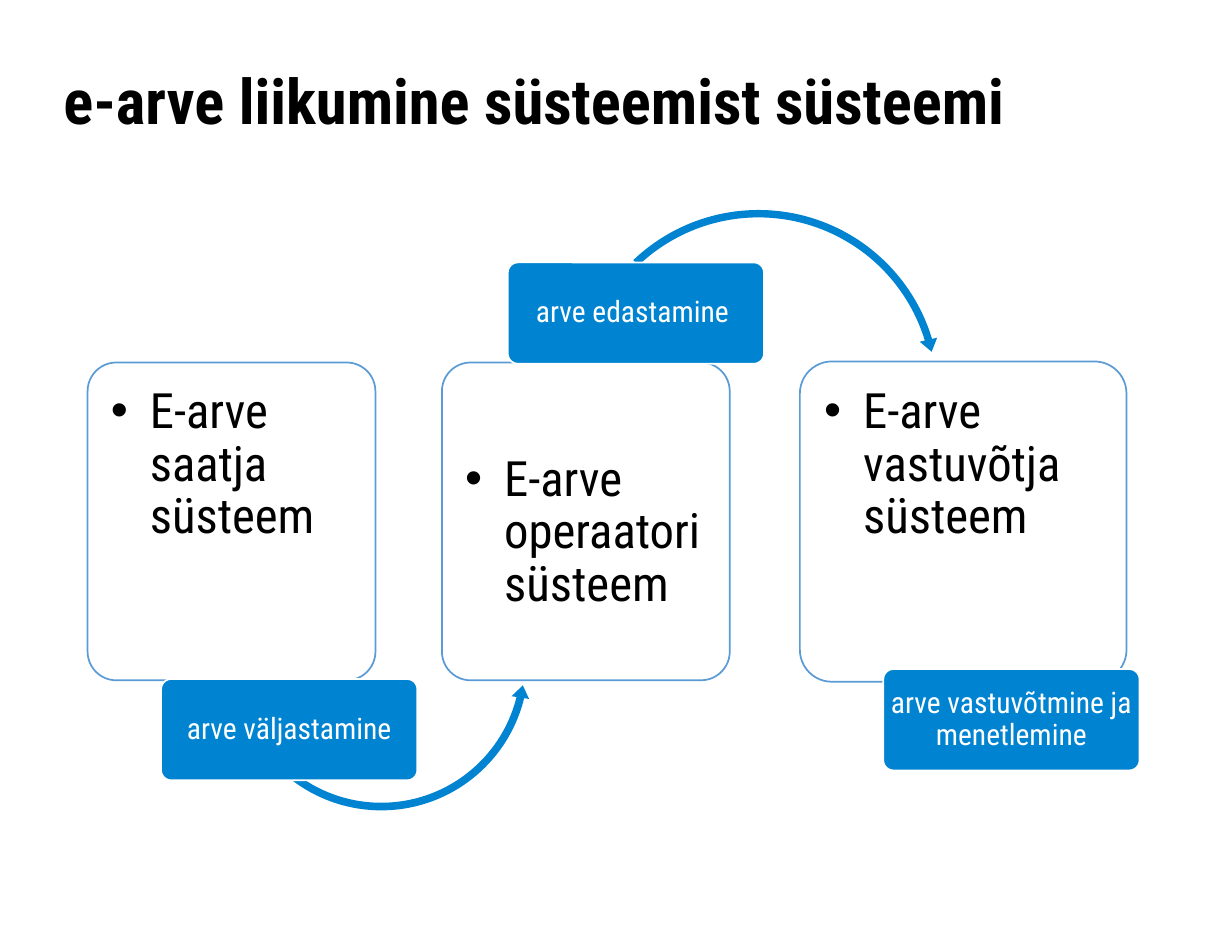
from dataclasses import dataclass

from lxml import etree
from pptx import Presentation
from pptx.dml.color import RGBColor
from pptx.enum.shapes import MSO_SHAPE
from pptx.enum.text import MSO_ANCHOR, PP_ALIGN
from pptx.oxml.ns import qn
from pptx.util import Pt

ROUND = MSO_SHAPE.ROUNDED_RECTANGLE
OVER = MSO_SHAPE.CIRCULAR_ARROW
UNDER = MSO_SHAPE.LEFT_CIRCULAR_ARROW
TOP, MIDDLE = MSO_ANCHOR.TOP, MSO_ANCHOR.MIDDLE
LEFT, CENTER = PP_ALIGN.LEFT, PP_ALIGN.CENTER


@dataclass(frozen=True)
class Theme:
    font: str = "Roboto Condensed"
    dot: str = "Arial"
    ink: RGBColor = RGBColor(0, 0, 0)
    white: RGBColor = RGBColor(255, 255, 255)
    blue: RGBColor = RGBColor(0x00, 0x84, 0xD1)
    edge: RGBColor = RGBColor(0x5B, 0x9B, 0xD5)
    title: int = 36
    body: int = 28
    label: int = 17


THEME = Theme()

# Per step: card box, top inset of its text, text, label position, label text
STEPS = [
    ((50.4, 208.6, 165.6, 182.9), 9, "E-arve saatja süsteem",
     (92.7, 390.7), "arve väljastamine"),
    ((254.2, 208.6, 165.6, 182.9), 48, "E-arve operaatori süsteem",
     (292.1, 151), "arve edastamine "),
    ((460.1, 208, 187.9, 184.3), 9, "E-arve vastuvõtja süsteem",
     (508.1, 385), "arve vastuvõtmine ja menetlemine"),
]
LABEL = (147.4, 58.3)

# Per arrow: kind, left, top, size, band, head span, end and start angles, head
ARROWS = [
    (UNDER, 131.8, 294.2, 175, 0.025, 5, 13.84, 129.65, 0.029),
    (OVER, 329, 117.8, 214.6, 0.02, 4.04, 343.13, 226.35, 0.024),
]


def write(shape, text, size, color, align, anchor, insets, lines, bold=False):
    frame = shape.text_frame
    sides = ("margin_left", "margin_top", "margin_right", "margin_bottom")
    look = dict(zip(sides, map(Pt, insets)))
    look.update(word_wrap=True, vertical_anchor=anchor)
    for name, value in look.items():
        setattr(frame, name, value)
    para = frame.paragraphs[0]
    para.alignment, para.line_spacing = align, lines
    run = para.add_run()
    run.text = text
    font = {"name": THEME.font, "size": Pt(size), "bold": bold}
    for name, value in font.items():
        setattr(run.font, name, value)
    run.font.color.rgb = color
    return para


def draw(slide, kind, box, fill, line=None):
    shape = slide.shapes.add_shape(kind, *map(Pt, box))
    shape.shadow.inherit = False
    shape.fill.solid()
    shape.fill.fore_color.rgb = fill
    if line is None:
        shape.line.fill.background()
    else:
        shape.line.color.rgb = line
        shape.line.width = Pt(1)
    return shape


def bullet(para, indent):
    props = para._p.get_or_add_pPr()
    props.set("marL", str(Pt(indent)))
    props.set("indent", str(-Pt(indent)))
    etree.SubElement(props, qn("a:buFont")).set("typeface", THEME.dot)
    etree.SubElement(props, qn("a:buChar")).set("char", "•")


def card(slide, box, top, text):
    shape = draw(slide, ROUND, box, THEME.white, THEME.edge)
    shape.adjustments[0] = 0.1
    tint = shape.fill._xPr.find(".//" + qn("a:srgbClr"))
    etree.SubElement(tint, qn("a:alpha")).set("val", "90000")
    para = write(shape, text, THEME.body, THEME.ink, LEFT, TOP,
                 (8.5, top, 8.5, 9), 0.9)
    bullet(para, 22.5)


def label(slide, box, text):
    shape = draw(slide, ROUND, box, THEME.blue, THEME.white)
    shape.adjustments[0] = 0.1
    write(shape, text, THEME.label, THEME.white, CENTER, MIDDLE,
          (2.5, 1.5, 2.5, 1.5), 0.9)


def arrow(slide, kind, left, top, size, band, span, end, start, head):
    """Draw an arc arrow; angles are degrees clockwise from the right."""
    shape = draw(slide, kind, (left, top, size, size), THEME.blue)
    unit = 0.6  # one degree in adjustment units
    values = (band, span * unit, end * unit, start * unit, head)
    for spot, value in enumerate(values):
        shape.adjustments[spot] = value


def heading(slide, box, text):
    shape = slide.shapes.title
    for name, value in zip(("left", "top", "width", "height"), box):
        setattr(shape, name, Pt(value))
    write(shape, text, THEME.title, THEME.ink, LEFT, MIDDLE,
          (0, 0, 0, 0), 0.88, bold=True)


def flow(slide):
    for spot, (box, top, text, place, note) in enumerate(STEPS):
        card(slide, box, top, text)
        if spot < len(ARROWS):
            arrow(slide, *ARROWS[spot])
        label(slide, place + LABEL, note)


def main():
    deck = Presentation()
    deck.slide_width, deck.slide_height = Pt(708.66), Pt(538.58)
    slide = deck.slides.add_slide(deck.slide_layouts[5])
    heading(slide, (36.4, 19.8, 643.7, 81.4),
            "e-arve liikumine süsteemist süsteemi")
    flow(slide)
    deck.save("out.pptx")


if __name__ == "__main__":
    main()
